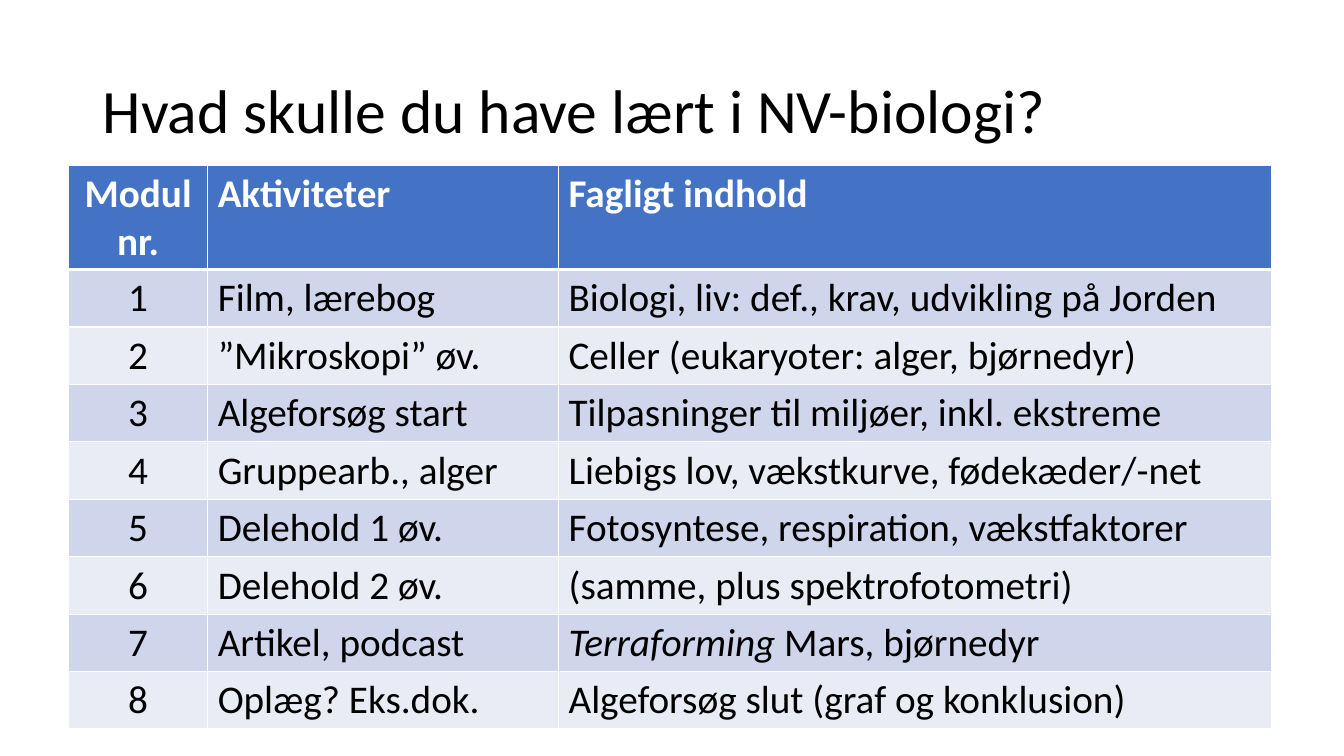
from lxml.etree import SubElement
from pptx import Presentation
from pptx.dml.color import RGBColor
from pptx.enum.text import MSO_ANCHOR, PP_ALIGN
from pptx.oxml.ns import qn
from pptx.util import Inches, Pt

COLORS = {
    "text": "000000",
    "white": "FFFFFF",
    "header": "4472C4",
    "odd": "CFD5EA",
    "even": "E9EBF5",
}
FONT = "Calibri"
COLUMN_WIDTHS = [1.38, 3.48, 7.07]
HEADER_HEIGHT = 1.03
ROW_HEIGHT = 0.57
HEADINGS = ["Modul nr.", "Aktiviteter", "Fagligt indhold"]
MODULES = [
    ("Film, lærebog", "Biologi, liv: def., krav, udvikling på Jorden"),
    ("”Mikroskopi” øv.", "Celler (eukaryoter: alger, bjørnedyr)"),
    ("Algeforsøg start", "Tilpasninger til miljøer, inkl. ekstreme"),
    ("Gruppearb., alger", "Liebigs lov, vækstkurve, fødekæder/-net"),
    ("Delehold 1 øv.", "Fotosyntese, respiration, vækstfaktorer"),
    ("Delehold 2 øv.", "(samme, plus spektrofotometri)"),
    ("Artikel, podcast", [("Terraforming", True), (" Mars, bjørnedyr", False)]),
    ("Oplæg? Eks.dok.", "Algeforsøg slut (graf og konklusion)"),
]


def write_text(frame, text, size=28, color="text", bold=False,
               align=PP_ALIGN.LEFT, line_spacing=None):
    para = frame.paragraphs[0]
    para.alignment = align
    if line_spacing:
        para.line_spacing = line_spacing
    parts = [(text, False)] if isinstance(text, str) else text
    for part, italic in parts:
        span = para.add_run()
        span.text = part
        span.font.name = FONT
        span.font.size = Pt(size)
        span.font.bold = bold
        span.font.italic = italic
        span.font.color.rgb = RGBColor.from_string(COLORS[color])


def set_borders(cell, top=1, bottom=1):
    properties = cell._tc.get_or_add_tcPr()
    for side, width in (("L", 1), ("R", 1), ("T", top), ("B", bottom)):
        line = SubElement(properties, qn(f"a:ln{side}"), w=str(Pt(width)))
        fill = SubElement(line, qn("a:solidFill"))
        SubElement(fill, qn("a:srgbClr"), val=COLORS["white"])


def add_title(page, left, top, width, height):
    box = page.shapes.add_textbox(
        Inches(left), Inches(top), Inches(width), Inches(height))
    frame = box.text_frame
    frame.word_wrap = True
    frame.vertical_anchor = MSO_ANCHOR.MIDDLE
    write_text(frame, "Hvad skulle du have lært i NV-biologi?",
               size=44, line_spacing=0.9)


def add_module_table(page, left, top):
    rows = [HEADINGS]
    rows += [(str(number), *module) for number, module in enumerate(MODULES, 1)]
    height = HEADER_HEIGHT + ROW_HEIGHT * len(MODULES)
    table = page.shapes.add_table(
        len(rows), len(COLUMN_WIDTHS), Inches(left), Inches(top),
        Inches(sum(COLUMN_WIDTHS)), Inches(height)).table
    for column, width in zip(table.columns, COLUMN_WIDTHS):
        column.width = Inches(width)
    for row_index, values in enumerate(rows):
        header = row_index == 0
        table.rows[row_index].height = Inches(
            HEADER_HEIGHT if header else ROW_HEIGHT)
        shade = "header" if header else "odd" if row_index % 2 else "even"
        for column_index, value in enumerate(values):
            cell = table.cell(row_index, column_index)
            set_borders(cell, top=3 if row_index == 1 else 1,
                        bottom=3 if header else 1)
            cell.fill.solid()
            cell.fill.fore_color.rgb = RGBColor.from_string(COLORS[shade])
            write_text(
                cell.text_frame, value, bold=header,
                color="white" if header else "text",
                align=PP_ALIGN.LEFT if column_index else PP_ALIGN.CENTER)


def main():
    deck = Presentation()
    deck.slide_width = Inches(13.33)
    deck.slide_height = Inches(7.5)
    page = deck.slides.add_slide(deck.slide_layouts[6])
    add_title(page, 0.92, 0.4, 11.5, 1.45)
    add_module_table(page, 0.68, 1.64)
    deck.save("out.pptx")


if __name__ == "__main__":
    main()
